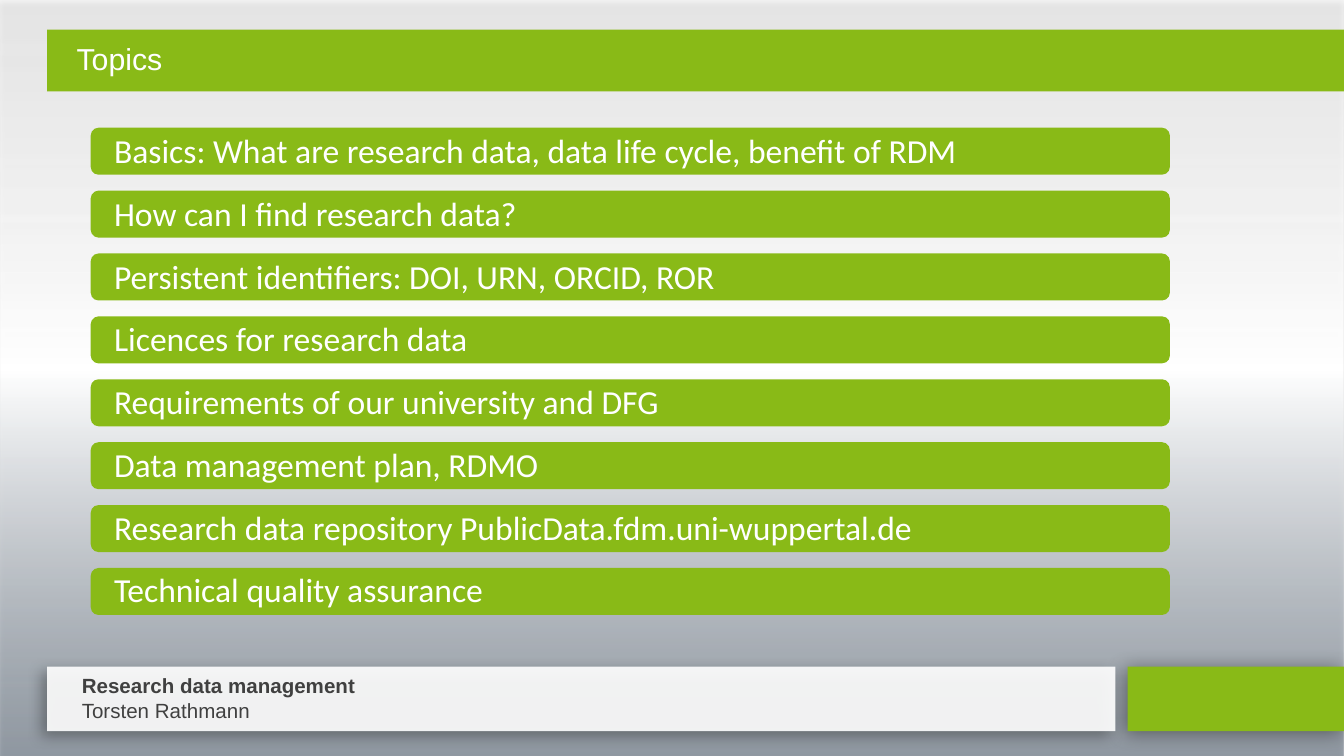
from lxml import etree
from pptx import Presentation
from pptx import util as u
from pptx.dml.color import RGBColor
from pptx.enum import shapes, text
from pptx.oxml.ns import qn

COLS, ROWS = 100, 56.25
CELL = u.Inches(0.1)

TOPICS = [
    "Basics: What are research data, data life cycle, benefit of RDM",
    "How can I find research data?",
    "Persistent identifiers: DOI, URN, ORCID, ROR",
    "Licences for research data",
    "Requirements of our university and DFG",
    "Data management plan, RDMO",
    "Research data repository PublicData.fdm.uni-wuppertal.de",
    "Technical quality assurance",
]


def color(hex_string):
    return RGBColor.from_string(hex_string)


def span(*cells):
    """Turn grid columns and rows into slide lengths."""
    return [u.Emu(round(c * CELL)) for c in cells]


def add_color(parent, hex_string, alpha=100):
    node = etree.SubElement(parent, qn("a:srgbClr"), val=hex_string)
    if alpha < 100:
        etree.SubElement(node, qn("a:alpha"), val=str(alpha * 1000))


class Deck:
    GREEN, WHITE, GREY = "89BA17", "FFFFFF", "404040"
    HEAD_FONT, BODY_FONT = "Arial", "Calibri"

    def __init__(self):
        self.prs = Presentation()
        self.prs.slide_width, self.prs.slide_height = span(COLS, ROWS)
        self.slide = self.prs.slides.add_slide(self.prs.slide_layouts[6])

    def panel(self, x, y, w, h, fill=GREEN, alpha=100, rounded=False):
        kind = shapes.MSO_SHAPE.ROUNDED_RECTANGLE if rounded else shapes.MSO_SHAPE.RECTANGLE
        panel = self.slide.shapes.add_shape(kind, *span(x, y, w, h))
        panel.shadow.inherit = False
        panel.line.fill.background()
        panel.fill.solid()
        panel.fill.fore_color.rgb = color(fill)
        if alpha < 100:
            solid = panel._element.spPr.find(qn("a:solidFill"))
            solid.clear()
            add_color(solid, fill, alpha)
        return panel

    def shade(self, panel, alpha, blur, distance, angle):
        effects = panel._element.spPr.find(qn("a:effectLst"))
        shadow = etree.SubElement(
            effects, qn("a:outerShdw"), blurRad=str(u.Pt(blur)), dist=str(u.Pt(distance)),
            dir=str(angle * 60000), algn="ctr", rotWithShape="0")
        add_color(shadow, "000000", alpha)

    def gradient(self, panel, stops, angle):
        solid = panel._element.spPr.find(qn("a:solidFill"))
        grad = etree.Element(qn("a:gradFill"), rotWithShape="1")
        stop_list = etree.SubElement(grad, qn("a:gsLst"))
        for position, hex_string, alpha in stops:
            stop = etree.SubElement(stop_list, qn("a:gs"), pos=str(position * 1000))
            add_color(stop, hex_string, alpha)
        etree.SubElement(grad, qn("a:lin"), ang=str(angle * 60000), scaled="0")
        solid.getparent().replace(solid, grad)

    def label(self, x, y, w, h, lines, size, font, ink=WHITE, gap=0, bold_first=False,
              left=1, top=0.5, grow=True):
        box = self.slide.shapes.add_textbox(*span(x, y, w, h))
        frame = box.text_frame
        frame.word_wrap = True
        frame.margin_left, frame.margin_top = span(left, top)
        fit = text.MSO_AUTO_SIZE
        frame.auto_size = fit.SHAPE_TO_FIT_TEXT if grow else fit.NONE
        for i, line in enumerate(lines):
            paragraph = frame.add_paragraph() if i else frame.paragraphs[0]
            paragraph.space_before = u.Pt(gap if i else 0)
            run = paragraph.add_run()
            run.text = line
            run.font.size, run.font.name = u.Pt(size), font
            run.font.bold = bold_first and i == 0
            run.font.color.rgb = color(ink)


def main():
    deck = Deck()

    # Background, grey at the foot and light at the top
    backdrop = deck.panel(0, 0, COLS, ROWS)
    deck.gradient(backdrop, [(0, "818C98", 75), (51, "FFFFFF", 100), (100, "F2F2F2", 73)], 270)
    deck.shade(backdrop, 35, 3.1, 1.8, 90)

    # Footer
    corner = deck.panel(83.9, 49.6, 16.1, 4.8)
    deck.shade(corner, 42, 10.8, 2, 142)
    footer = deck.panel(3.5, 49.6, 79.5, 4.8, deck.WHITE, alpha=91)
    deck.shade(footer, 34, 7.5, 4, 145)
    deck.label(5.1, 49.6, 59.8, 4.7, ["Research data management", "Torsten Rathmann"],
               11, deck.HEAD_FONT, deck.GREY, bold_first=True)

    # Title band
    deck.panel(3.5, 2.2, 96.9, 4.6)
    deck.label(3.5, 2.2, 96.9, 3.5, ["Topics"], 16.2, deck.HEAD_FONT,
               left=2.2, top=0.8, grow=False)

    # Topic list, one bar behind each line
    first_bar, pitch = 9.5, 4.68
    for row in range(len(TOPICS)):
        deck.panel(6.75, first_bar + row * pitch, 80.3, 3.5, rounded=True)
    deck.label(7.5, 9.2, 92.1, 37, TOPICS, 18, deck.BODY_FONT, gap=12)

    deck.prs.save("out.pptx")


if __name__ == "__main__":
    main()
